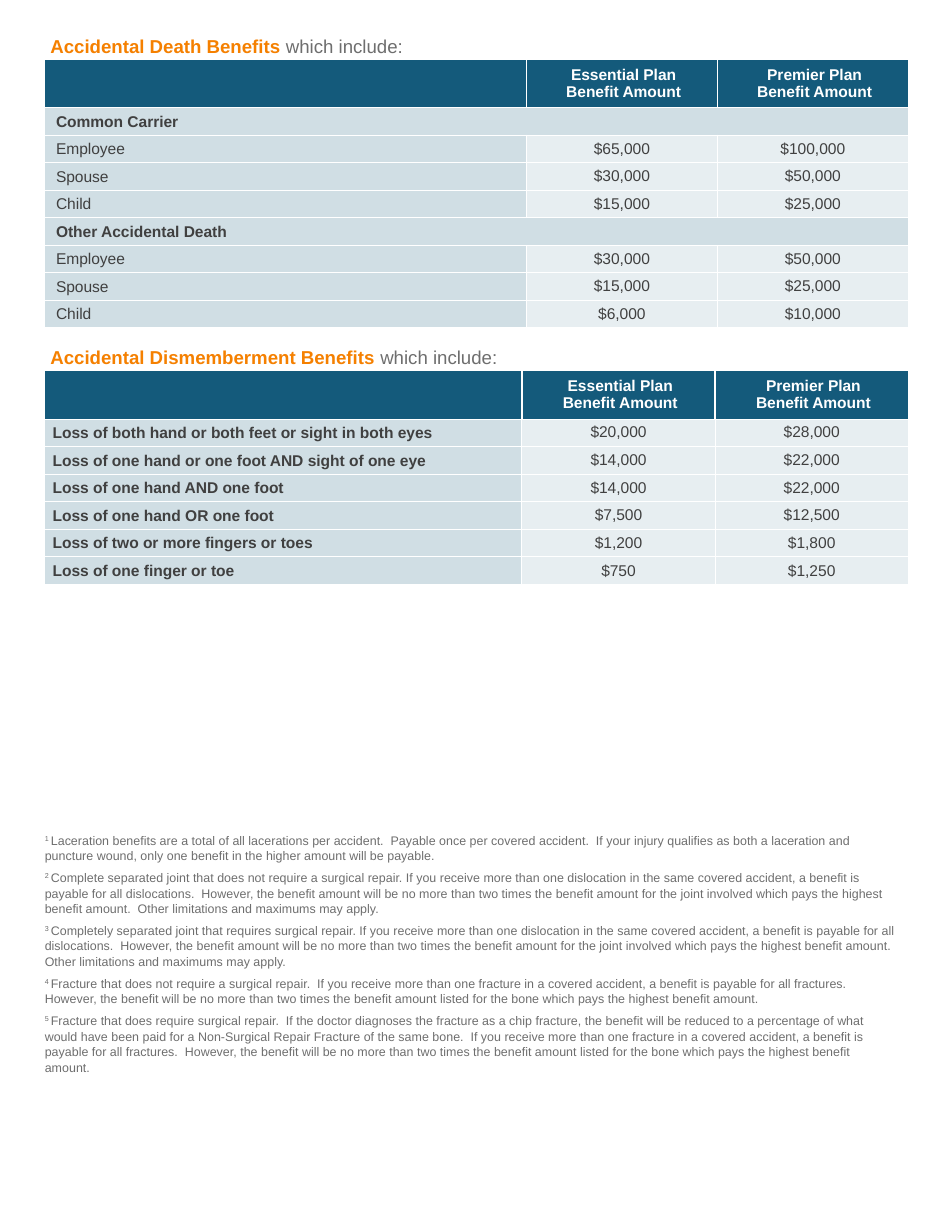
from lxml.etree import SubElement
from pptx import Presentation
from pptx.dml.color import RGBColor
from pptx.enum.text import MSO_ANCHOR as ANCHOR, PP_ALIGN as ALIGN
from pptx.oxml.ns import qn
from pptx.util import Inches, Pt

ORANGE = RGBColor(0xF5, 0x80, 0x00)
GRAY = RGBColor(0x6E, 0x6E, 0x6E)
DARK = RGBColor(0x40, 0x40, 0x40)
TEAL = RGBColor(0x14, 0x5A, 0x7B)
WHITE = RGBColor(0xFF, 0xFF, 0xFF)

LEFT, WIDTH = 0.4, 7.71
TITLE_H, HEADER_H = 0.26, 0.43
PLANS = ["Essential Plan", "Premier Plan"]
SIDES = ["margin_left", "margin_top", "margin_right", "margin_bottom"]

# Benefit rows: a section row has a label only
DEATH = [
    ["Common Carrier"],
    ["Employee", "$65,000", "$100,000"],
    ["Spouse", "$30,000", "$50,000"],
    ["Child", "$15,000", "$25,000"],
    ["Other Accidental Death"],
    ["Employee", "$30,000", "$50,000"],
    ["Spouse", "$15,000", "$25,000"],
    ["Child", "$6,000", "$10,000"],
]
DISMEMBERMENT = [
    ["Loss of both hand or both feet or sight in both eyes", "$20,000", "$28,000"],
    ["Loss of one hand or one foot AND sight of one eye", "$14,000", "$22,000"],
    ["Loss of one hand AND one foot", "$14,000", "$22,000"],
    ["Loss of one hand OR one foot", "$7,500", "$12,500"],
    ["Loss of two or more fingers or toes", "$1,200", "$1,800"],
    ["Loss of one finger or toe", "$750", "$1,250"],
]
FOOTNOTES = [
    "Laceration benefits are a total of all lacerations per accident.  Payable once per covered "
    "accident.  If your injury qualifies as both a laceration and puncture wound, only one benefit "
    "in the higher amount will be payable.",
    "Complete separated joint that does not require a surgical repair. If you receive more than one "
    "dislocation in the same covered accident, a benefit is payable for all dislocations.  However, "
    "the benefit amount will be no more than two times the benefit amount for the joint involved "
    "which pays the highest benefit amount.  Other limitations and maximums may apply.",
    "Completely separated joint that requires surgical repair. If you receive more than one "
    "dislocation in the same covered accident, a benefit is payable for all dislocations.  However, "
    "the benefit amount will be no more than two times the benefit amount for the joint involved "
    "which pays the highest benefit amount.  Other limitations and maximums may apply.",
    "Fracture that does not require a surgical repair.  If you receive more than one fracture in a "
    "covered accident, a benefit is payable for all fractures.  However, the benefit will be no more "
    "than two times the benefit amount listed for the bone which pays the highest benefit amount.",
    "Fracture that does require surgical repair.  If the doctor diagnoses the fracture as a chip "
    "fracture, the benefit will be reduced to a percentage of what would have been paid for a "
    "Non-Surgical Repair Fracture of the same bone.  If you receive more than one fracture in a "
    "covered accident, a benefit is payable for all fractures.  However, the benefit will be no more "
    "than two times the benefit amount listed for the bone which pays the highest benefit amount.",
]


def set_all(target, values):
    for name, value in values.items():
        setattr(target, name, value)


class BenefitsPage:
    """Holds the page style and the current slide."""

    font = "Arial"

    def __init__(self, prs):
        self.slide = prs.slides.add_slide(prs.slide_layouts[6])

    def run(self, p, text, size, color, bold=False):
        r = p.add_run()
        r.text = text
        set_all(r.font, {"name": self.font, "size": Pt(size), "bold": bold})
        r.font.color.rgb = color
        return r

    def borders(self, cell, widths):
        tc_pr = cell._tc.get_or_add_tcPr()
        for side, width in zip("LRTB", widths):
            ln = SubElement(tc_pr, qn(f"a:ln{side}"), w=str(Pt(width)))
            if width:
                fill = SubElement(ln, qn("a:solidFill"))
                SubElement(fill, qn("a:srgbClr"), val=str(WHITE))
            else:
                SubElement(ln, qn("a:noFill"))

    def cell(self, cell, lines, insets, widths, fill=None, alpha=100,
             anchor=ANCHOR.MIDDLE, indent=0, **para):
        """Fill a cell; each line is a list of (text, size, color, bold)."""
        set_all(cell, dict(zip(SIDES, map(Inches, insets)), vertical_anchor=anchor))
        self.borders(cell, widths)
        if fill is None:
            cell.fill.background()
        else:
            cell.fill.solid()
            cell.fill.fore_color.rgb = fill
            color = cell._tc.tcPr.find(qn("a:solidFill"))[0]
            SubElement(color, qn("a:alpha"), val=str(alpha * 1000))
        tf = cell.text_frame
        for i, line in enumerate(lines or [[]]):
            p = tf.add_paragraph() if i else tf.paragraphs[0]
            set_all(p, para)
            if indent:
                p._p.get_or_add_pPr().set("marL", str(Inches(indent)))
            for part in line:
                self.run(p, *part)
            if not line:  # keeps an empty cell from stretching its row
                SubElement(p._p, qn("a:endParaRPr"), sz="1000")

    def table(self, top, height, label_w, title, rows, label_insets, value_insets,
              bold_labels=False):
        frame = self.slide.shapes.add_table(
            len(rows) + 2, 3, Inches(LEFT), Inches(top), Inches(WIDTH), Inches(height))
        t = frame.table
        set_all(t, {"first_row": False, "horz_banding": False})
        plan_w = (WIDTH - label_w) / 2
        for col, w in zip(t.columns, [label_w, plan_w, plan_w]):
            col.width = Inches(w)
        row_h = (height - TITLE_H - HEADER_H) / len(rows)
        for row, h in zip(t.rows, [TITLE_H, HEADER_H] + [row_h] * len(rows)):
            row.height = Inches(h)

        # Title row
        insets, widths = (0.05, 0.02, 0.02, 0.02), (0.5, 0.5, 0, 0.5)
        heading = [(title + " ", 12, ORANGE, True), ("which include:", 12, GRAY)]
        for c, lines in enumerate([[heading], [], []]):
            self.cell(t.cell(0, c), lines, insets, widths, anchor=ANCHOR.BOTTOM,
                      line_spacing=Pt(12), space_before=Pt(6))
        t.cell(0, 0).merge(t.cell(0, 1))

        # Plan header row
        for c, plan in enumerate([None] + PLANS):
            lines = [[(s, 10, WHITE, True)] for s in (plan, "Benefit Amount")] if plan else []
            self.cell(t.cell(1, c), lines, (0, 0.02, 0.02, 0.02), (1, 1, 0.5, 0.5),
                      TEAL, indent=0.05, alignment=ALIGN.CENTER)

        # Benefit rows
        for i, (label, *amounts) in enumerate(rows, 2):
            top_w = 0.5 if i == 2 else 0.75
            bold = bold_labels or not amounts
            self.cell(t.cell(i, 0), [[(label, 10, DARK, bold)]], label_insets,
                      (1, 0.75, top_w, 0.75), TEAL, 20, indent=0.05, line_spacing=1.05)
            for c, amount in enumerate(amounts or [None, None], 1):
                lines = [[(amount, 10, DARK)]] if amount else []
                self.cell(t.cell(i, c), lines, value_insets,
                          (0.75, 1 if c == 2 else 0.75, top_w, 0.75),
                          TEAL, 10, alignment=ALIGN.CENTER)
            if not amounts:
                t.cell(i, 0).merge(t.cell(i, 2))

    def footnotes(self, top, height, notes):
        box = self.slide.shapes.add_textbox(
            Inches(LEFT), Inches(top), Inches(WIDTH), Inches(height))
        tf = box.text_frame
        set_all(tf, {"word_wrap": True, "margin_left": 0})
        for n, note in enumerate(notes, 1):
            p = tf.paragraphs[0] if n == 1 else tf.add_paragraph()
            set_all(p, {"line_spacing": Pt(10), "space_before": Pt(1), "space_after": Pt(3)})
            mark = self.run(p, f"{n} ", 8, GRAY)
            mark._r.get_or_add_rPr().set("baseline", "30000")
            self.run(p, note, 8, GRAY)


def main():
    prs = Presentation()
    set_all(prs, {"slide_width": Inches(8.5), "slide_height": Inches(11)})
    page = BenefitsPage(prs)
    page.table(0.27, 2.66, 4.3, "Accidental Death Benefits", DEATH,
               (0.05, 0.02, 0, 0.02), (0.02,) * 4)
    page.footnotes(7.38, 2.24, FOOTNOTES)
    tight = (0.02, 0.01, 0.02, 0.01)
    page.table(3.05, 2.17, 4.26, "Accidental Dismemberment Benefits", DISMEMBERMENT,
               tight, tight, bold_labels=True)
    prs.save("out.pptx")


if __name__ == "__main__":
    main()
